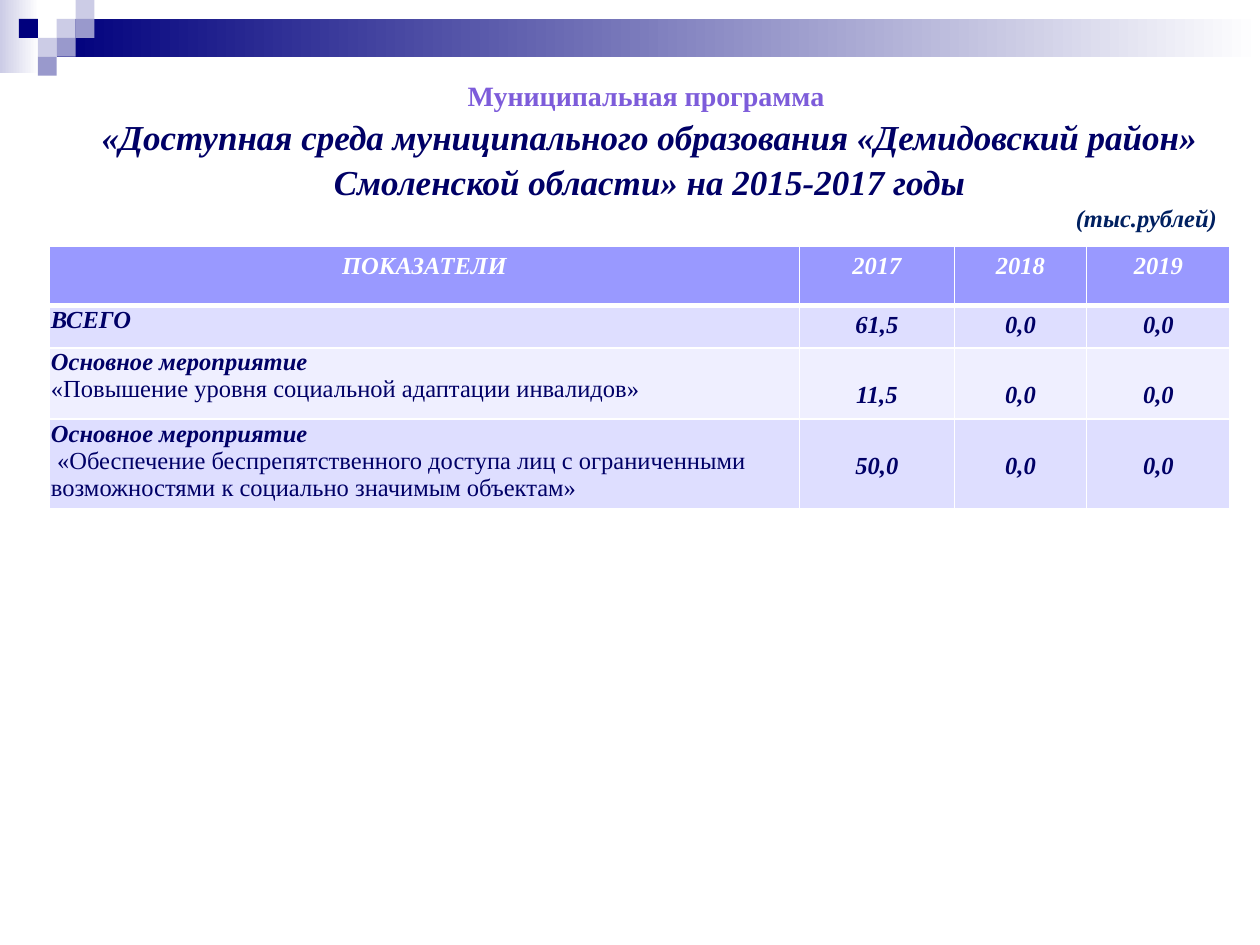
from typing import NamedTuple

import lxml.etree
import pptx
import pptx.dml.color
import pptx.enum.shapes
import pptx.enum.text
import pptx.oxml.ns
import pptx.util

Pt = pptx.util.Pt
RGBColor = pptx.dml.color.RGBColor
Align = pptx.enum.text.PP_ALIGN

FONT = "Times New Roman"
WHITE = RGBColor(0xFF, 0xFF, 0xFF)
NAVY = RGBColor(0x00, 0x00, 0x7D)
LAVENDER = RGBColor(0xCC, 0xCC, 0xE6)
PERIWINKLE = RGBColor(0x99, 0x99, 0xCC)
VIOLET = RGBColor(0x7D, 0x5C, 0xDA)
INK = RGBColor(0x00, 0x00, 0x66)
NOTE_BLUE = RGBColor(0x00, 0x20, 0x60)
HEADER_FILL = RGBColor(0x99, 0x99, 0xFF)
DARK_BAND = RGBColor(0xDE, 0xDE, 0xFF)
LIGHT_BAND = RGBColor(0xEF, 0xEF, 0xFF)

SQUARE = 10.8
LINE_HEIGHT = 15.5
CELL_MARGIN = 3.6
LABEL_MARGIN = 0.72
COLUMN_WIDTHS = (428.4, 88.56, 75.6, 82.08)


class Box(NamedTuple):
    left: float
    top: float
    width: float
    height: float


class Square(NamedTuple):
    column: int
    row: int
    color: RGBColor


class TableRow(NamedTuple):
    height: float
    fill: RGBColor
    label: str
    values: tuple[str, ...]
    detail: str = ""


SQUARES = (
    Square(3, 1, LAVENDER),
    Square(4, 0, LAVENDER),
    Square(4, 1, PERIWINKLE),
    Square(2, 2, LAVENDER),
    Square(1, 1, NAVY),
    Square(3, 2, PERIWINKLE),
    Square(2, 3, PERIWINKLE),
)

ROWS = (
    TableRow(33.8, HEADER_FILL, "ПОКАЗАТЕЛИ", ("2017", "2018", "2019")),
    TableRow(23.8, DARK_BAND, "ВСЕГО", ("61,5", "0,0", "0,0")),
    TableRow(40.7, LIGHT_BAND, "Основное мероприятие", ("11,5", "0,0", "0,0"),
             "«Повышение уровня социальной адаптации инвалидов»"),
    TableRow(50.8, DARK_BAND, "Основное мероприятие", ("50,0", "0,0", "0,0"),
             " «Обеспечение беспрепятственного доступа лиц с ограниченными "
             "возможностями к социально значимым объектам»"),
)


def write_text(paragraph, text: str, *, size: float = 14, color: RGBColor = INK,
               bold: bool = True, italic: bool = True, align=Align.LEFT,
               spacing: float = 1.0) -> None:
    paragraph.alignment = align
    paragraph.line_spacing = spacing
    run = paragraph.add_run()
    run.text = text
    run.font.name = FONT
    run.font.size = Pt(size)
    run.font.bold = bold
    run.font.italic = italic
    run.font.color.rgb = color


def add_rectangle(slide, box: Box, color: RGBColor, fade: bool = False) -> None:
    shape = slide.shapes.add_shape(
        pptx.enum.shapes.MSO_SHAPE.RECTANGLE, *map(Pt, box))
    shape.shadow.inherit = False
    shape.line.fill.background()
    if fade:
        shape.fill.gradient()
        shape.fill.gradient_angle = 0
        for stop, position, stop_color in zip(
                shape.fill.gradient_stops, (0, 1), (color, WHITE)):
            stop.position = position
            stop.color.rgb = stop_color
    else:
        shape.fill.solid()
        shape.fill.fore_color.rgb = color


def add_text_frame(slide, box: Box, wrap: bool):
    frame = slide.shapes.add_textbox(*map(Pt, box)).text_frame
    frame.word_wrap = wrap
    return frame


def set_borders(cell, top: float, bottom: float) -> None:
    properties = cell._tc.get_or_add_tcPr()
    qualified = pptx.oxml.ns.qn
    widths = {"a:lnL": 1, "a:lnR": 1, "a:lnT": top, "a:lnB": bottom}
    for position, (tag, width) in enumerate(widths.items()):
        line = lxml.etree.Element(qualified(tag), w=str(Pt(width)))
        fill = lxml.etree.SubElement(line, qualified("a:solidFill"))
        lxml.etree.SubElement(fill, qualified("a:srgbClr"), val=str(WHITE))
        properties.insert(position, line)


def fill_cell(cell, row: TableRow, row_index: int, column_index: int) -> None:
    header = row_index == 0
    is_label = column_index == 0
    cell.fill.solid()
    cell.fill.fore_color.rgb = row.fill
    set_borders(cell, 3 if row_index == 1 else 1, 3 if header else 1)
    if is_label and not header:
        cell.margin_left = cell.margin_right = cell.margin_top = Pt(LABEL_MARGIN)
        cell.margin_bottom = Pt(0)
    elif row.detail:
        cell.margin_top = Pt(CELL_MARGIN + LINE_HEIGHT)
    frame = cell.text_frame
    write_text(frame.paragraphs[0],
               row.label if is_label else row.values[column_index - 1],
               color=WHITE if header else INK,
               align=Align.LEFT if is_label and not header else Align.CENTER)
    if is_label and row.detail:
        write_text(frame.add_paragraph(), row.detail, bold=False, italic=False)


def add_indicator_table(slide, left: float, top: float) -> None:
    box = Box(left, top, sum(COLUMN_WIDTHS), sum(row.height for row in ROWS))
    table = slide.shapes.add_table(
        len(ROWS), len(COLUMN_WIDTHS), *map(Pt, box)).table
    table.first_row = table.horz_banding = False
    for column, width in zip(table.columns, COLUMN_WIDTHS):
        column.width = Pt(width)
    for row_index, row in enumerate(ROWS):
        table.rows[row_index].height = Pt(row.height)
        for column_index in range(len(COLUMN_WIDTHS)):
            fill_cell(table.cell(row_index, column_index), row,
                      row_index, column_index)


def main() -> None:
    presentation = pptx.Presentation()
    presentation.slide_width = Pt(720)
    presentation.slide_height = Pt(540)
    slide = presentation.slides.add_slide(presentation.slide_layouts[6])

    add_rectangle(slide, Box(0, 0, 22.3, 41.8), LAVENDER, fade=True)
    add_rectangle(slide, Box(3 * SQUARE, SQUARE, 687.6, 2 * SQUARE), NAVY, fade=True)
    for square in SQUARES:
        add_rectangle(slide, Box(square.column * SQUARE, square.row * SQUARE,
                                 SQUARE, SQUARE), square.color)

    title = add_text_frame(slide, Box(22.3, 39.6, 697.7, 74.9), wrap=True)
    write_text(title.paragraphs[0], "Муниципальная программа ", size=16,
               color=VIOLET, italic=False, align=Align.CENTER, spacing=1.08)
    write_text(title.add_paragraph(),
               "«Доступная среда муниципального образования «Демидовский район» "
               "Смоленской области» на 2015-2017 годы",
               size=20, align=Align.CENTER, spacing=1.08)

    add_indicator_table(slide, 28.4, 140.9)

    unit_note = add_text_frame(slide, Box(607.7, 112.3, 95.8, 24.5), wrap=False)
    write_text(unit_note.paragraphs[0], "(тыс.рублей)", color=NOTE_BLUE)

    presentation.save("out.pptx")


if __name__ == "__main__":
    main()
